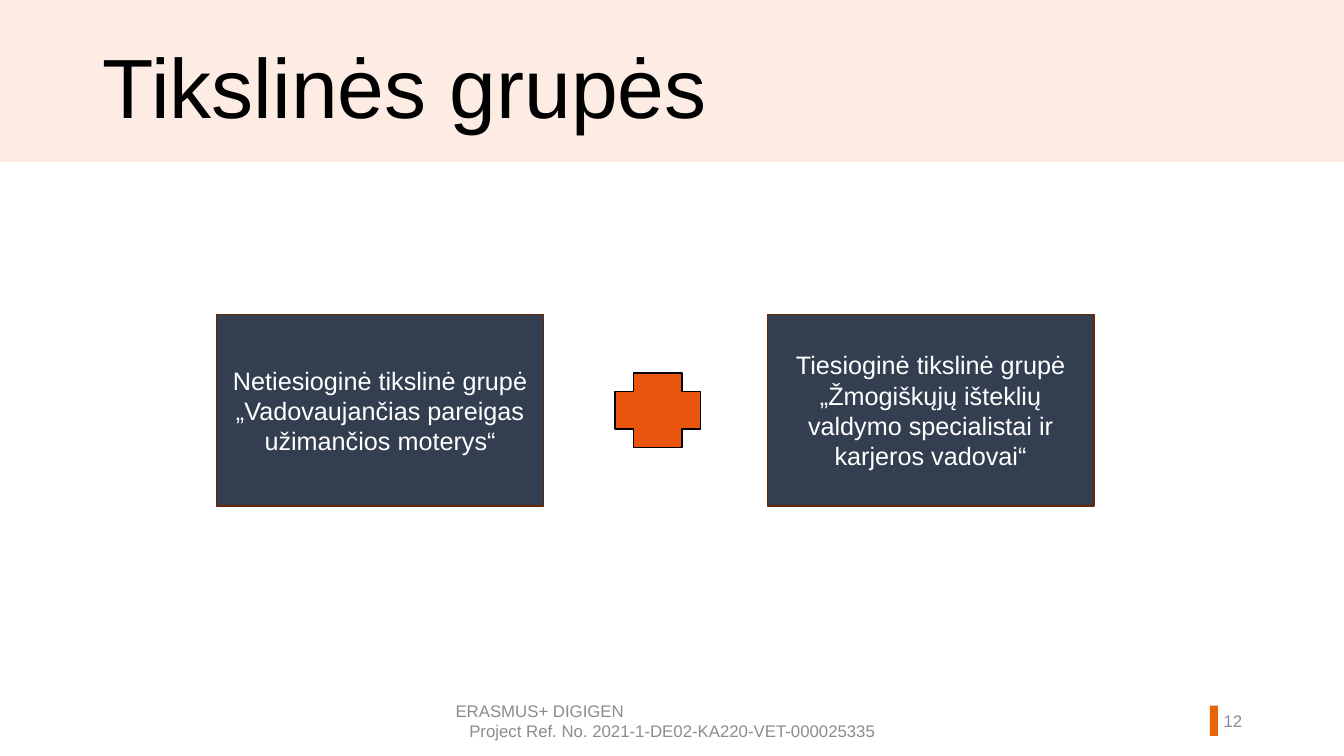
from pptx import Presentation
from pptx import util as u
from pptx.dml.color import RGBColor
from pptx.enum import shapes, text

COLOURS = {
    "band": "FDECE3", "marker": "E86507", "plus": "E9550D",
    "group": "333F50", "group_line": "662506",
    "black": "000000", "white": "FFFFFF", "grey": "8C8C8C",
}
ALIGN = text.PP_ALIGN
KIND = shapes.MSO_SHAPE


def add_block(kind, place, fill, line=None):
    """Add a flat preset shape, outlined at 1 pt when a line colour is named."""
    block = page.shapes.add_shape(kind, *map(u.Inches, place))
    block.shadow.inherit = False
    block.fill.solid()
    block.fill.fore_color.rgb = RGBColor.from_string(COLOURS[fill])
    if line:
        block.line.color.rgb = RGBColor.from_string(COLOURS[line])
        block.line.width = u.Pt(1)
    else:
        block.line.fill.background()
    return block


def write(box, lines, size, colour, anchor=text.MSO_ANCHOR.MIDDLE):
    """Fill a box with one paragraph per (wording, alignment) pair."""
    frame = box.text_frame
    settings = {"word_wrap": True, "auto_size": text.MSO_AUTO_SIZE.NONE,
                "vertical_anchor": anchor}
    for name, value in settings.items():
        setattr(frame, name, value)
    for index, (wording, alignment) in enumerate(lines):
        para = frame.add_paragraph() if index else frame.paragraphs[0]
        para.alignment = alignment
        span = para.add_run()
        span.text = wording
        for name, value in {"name": "Arial", "size": u.Pt(size)}.items():
            setattr(span.font, name, value)
        span.font.color.rgb = RGBColor.from_string(COLOURS[colour])


deck = Presentation()
deck.slide_width, deck.slide_height = u.Inches(13.33), u.Inches(7.5)
page = deck.slides.add_slide(deck.slide_layouts.get_by_name("Title Only"))

# Header band and title
title = page.shapes.title
band = add_block(KIND.RECTANGLE, (0, 0, 13.33, 1.61), "band")
title.element.addprevious(band.element)
title_place = {"left": 0.92, "top": 0.41, "width": 9.93, "height": 0.85}
for side, inches in title_place.items():
    setattr(title, side, u.Inches(inches))
write(title, [("Tikslinės grupės", ALIGN.LEFT)], 60, "black", text.MSO_ANCHOR.TOP)
title.text_frame.paragraphs[0].line_spacing = 0.9

# Footer and page number
add_block(KIND.RECTANGLE, (12, 7, 0.08, 0.3), "marker")
footer_parts = [
    (11.77, 0.65, [("12", ALIGN.RIGHT)]),
    (4.42, 4.5, [("ERASMUS+ DIGIGEN", ALIGN.LEFT),
                 ("Project Ref. No. 2021-1-DE02-KA220-VET-000025335", ALIGN.CENTER)]),
]
for left, width, lines in footer_parts:
    box = page.shapes.add_textbox(*map(u.Inches, (left, 6.95, width, 0.4)))
    write(box, lines, 12, "grey")

# The two target groups, joined by a plus sign
groups = [
    (2.15, "Netiesioginė tikslinė grupė „Vadovaujančias pareigas užimančios moterys“"),
    (7.61, "Tiesioginė tikslinė grupė „Žmogiškųjų išteklių valdymo specialistai "
           "ir karjeros vadovai“"),
]
for left, wording in groups:
    group = add_block(KIND.RECTANGLE, (left, 3.12, 3.24, 1.9), "group", "group_line")
    write(group, [(wording, ALIGN.CENTER)], 18, "white")
add_block(KIND.CROSS, (6.1, 3.7, 0.85, 0.74), "plus", "black")

deck.save("out.pptx")
